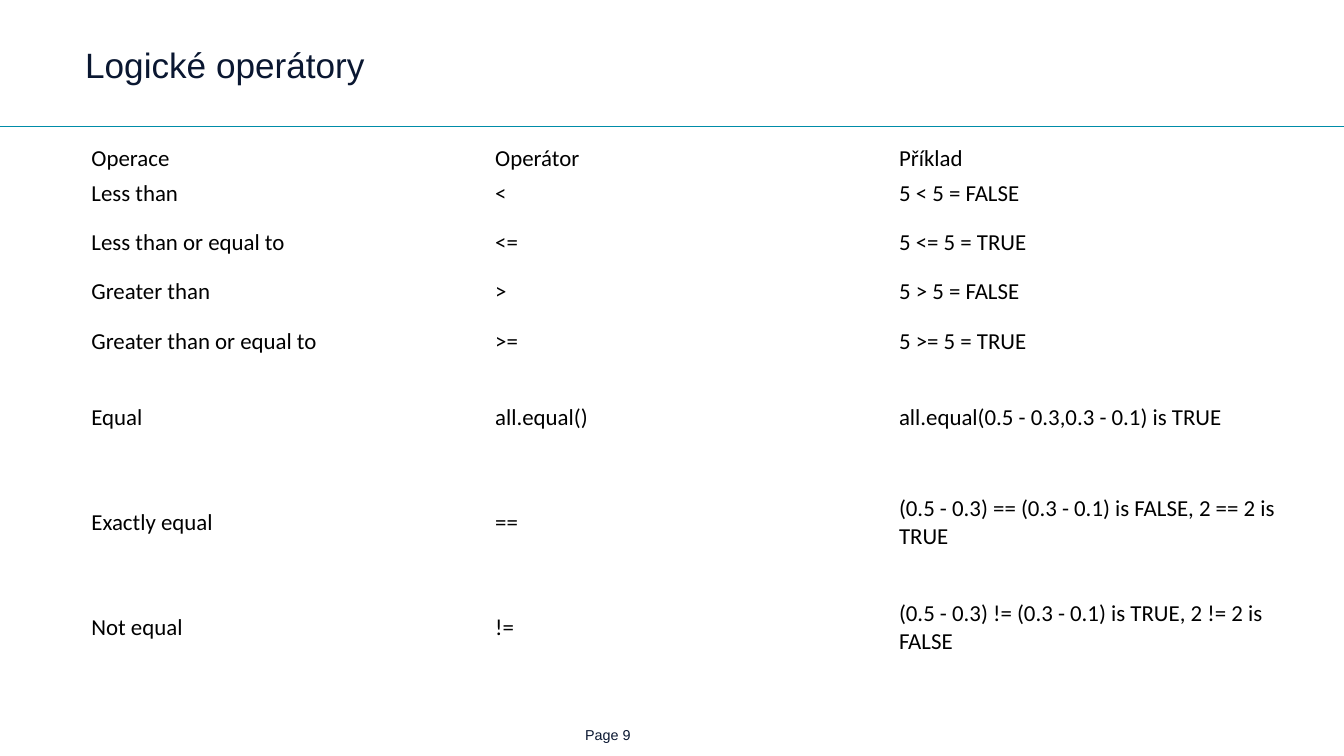
"""Build a slide with a table of logical operators."""
from lxml import etree
from pptx import Presentation
from pptx.dml.color import RGBColor
from pptx.enum import shapes, text
from pptx.oxml import ns
from pptx.util import Pt

TITLE = "Logické operátory"
PAGE = "Page 9"
ROWS = [
    ("Operace", "Operátor", "Příklad"),
    ("Less than", "<", "5 < 5 = FALSE"),
    ("Less than or equal to", "<=", "5 <= 5 = TRUE"),
    ("Greater than", ">", "5 > 5 = FALSE"),
    ("Greater than or equal to", ">=", "5 >= 5 = TRUE"),
    ("Equal", "all.equal()", "all.equal(0.5 - 0.3,0.3 - 0.1) is TRUE"),
    ("Exactly equal", "==", "(0.5 - 0.3) == (0.3 - 0.1) is FALSE, 2 == 2 is TRUE"),
    ("Not equal", "!=", "(0.5 - 0.3) != (0.3 - 0.1) is TRUE, 2 != 2 is FALSE"),
]
HEIGHTS = [27.4, 27.4, 49.7, 27.4, 49.7, 71.3, 93.6, 71.3]
WIDE, HIGH = 1058.4, 595.4
LEFT, SPAN = 67, 954
RULE = 99.4
NAVY, BLACK, TEAL = "0A1731", "000000", "008CA8"
HEAD = {"name": "Arial", "size": Pt(27.7), "bold": False}
BODY = {"name": "Calibri", "size": Pt(18), "bold": False}
FOOT = {"name": "Arial", "size": Pt(11.3)}
TOP, MID, LOW = text.MSO_ANCHOR.TOP, text.MSO_ANCHOR.MIDDLE, text.MSO_ANCHOR.BOTTOM


def paint(part, tone):
    part.rgb = RGBColor.from_string(tone)


def apply(item, form):
    for key, value in form.items():
        setattr(item, key, value)


def pads(left, top, right, low):
    sides = ("left", "top", "right", "bottom")
    return {f"margin_{s}": Pt(v) for s, v in zip(sides, (left, top, right, low))}


def write(frame, words, form, tone):
    para = frame.paragraphs[0]
    para.alignment = text.PP_ALIGN.LEFT
    run = para.add_run()
    run.text = words
    apply(run.font, form)
    paint(run.font.color, tone)
    return para


def add_title(slide):
    title = slide.shapes.title
    apply(title, {"left": Pt(LEFT), "top": Pt(39.6), "width": Pt(SPAN), "height": Pt(50.4)})
    frame = title.text_frame
    apply(frame, pads(0, 0, 6.5, 0))
    apply(frame, {"vertical_anchor": TOP, "word_wrap": True,
                  "auto_size": text.MSO_AUTO_SIZE.NONE})
    para = write(frame, TITLE, HEAD, NAVY)
    apply(para, {"line_spacing": 0.85, "space_before": Pt(0), "space_after": Pt(7.5)})


def add_rule(slide):
    kind = shapes.MSO_CONNECTOR.STRAIGHT
    rule = slide.shapes.add_connector(kind, Pt(0), Pt(RULE), Pt(WIDE), Pt(RULE))
    paint(rule.line.color, TEAL) if rule.line.fill.solid() else None
    rule.line.width = Pt(0.75)
    paint(rule.line.color, TEAL)
    etree.SubElement(rule._element.spPr, ns.qn("a:effectLst"))


def add_grid(slide):
    count = len(ROWS[0])
    frame = slide.shapes.add_table(len(ROWS), count, Pt(LEFT), Pt(110.9),
                                   Pt(SPAN), Pt(sum(HEIGHTS)))
    grid = frame.table
    apply(grid, {"first_row": False, "horz_banding": False})
    for col in grid.columns:
        col.width = Pt(SPAN / count)
    for row, high, words in zip(grid.rows, HEIGHTS, ROWS):
        row.height = Pt(high)
        for cell, word in zip(row.cells, words):
            cell.fill.background()
            apply(cell, pads(5, 2.9, 5, 2.9))
            cell.vertical_anchor = MID
            write(cell.text_frame, word, BODY, BLACK)


def add_page(slide):
    box = slide.shapes.add_textbox(Pt(460.8), Pt(573.8), Pt(66), Pt(11.5))
    apply(box.text_frame, pads(0, 0, 0, 0))
    apply(box.text_frame, {"vertical_anchor": LOW, "word_wrap": True})
    write(box.text_frame, PAGE, FOOT, NAVY)


def main():
    deck = Presentation()
    apply(deck, {"slide_width": Pt(WIDE), "slide_height": Pt(HIGH)})
    slide = deck.slides.add_slide(deck.slide_layouts[5])
    for build in (add_rule, add_grid, add_title, add_page):
        build(slide)
    deck.save("out.pptx")


if __name__ == "__main__":
    main()
